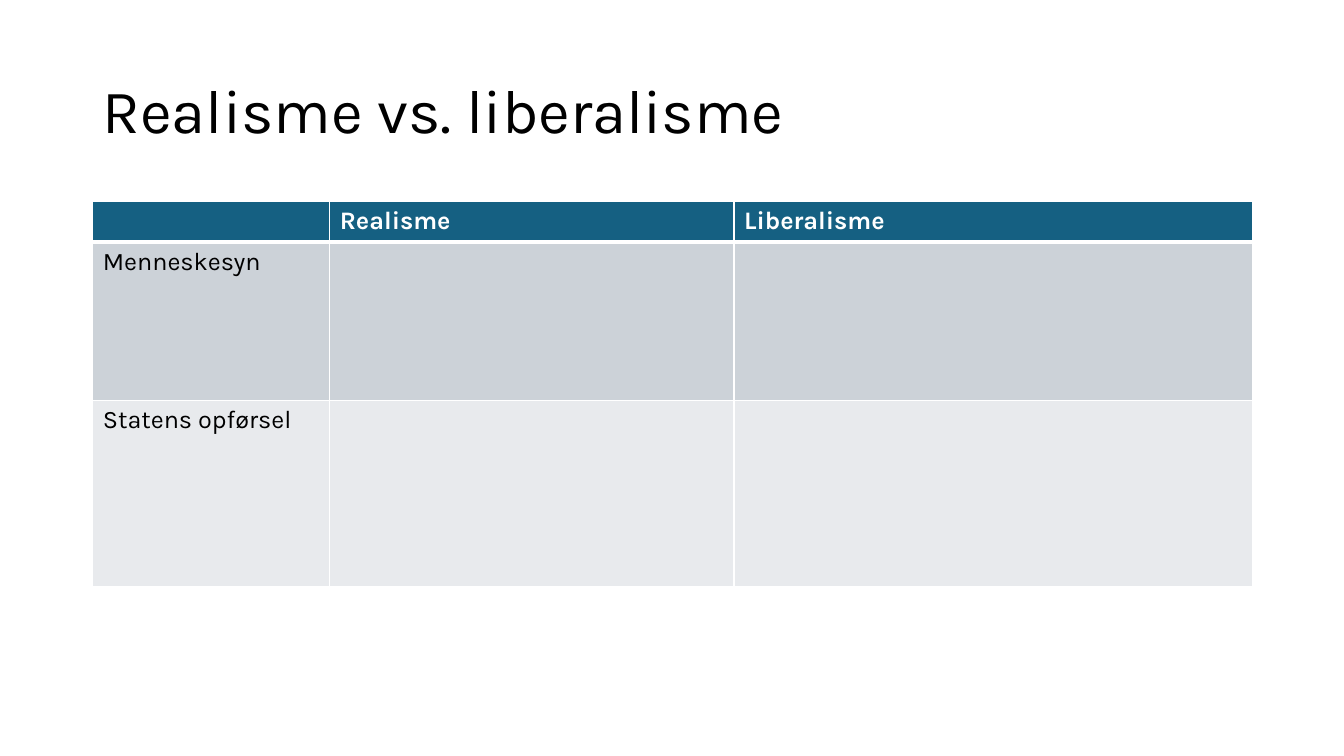
from dataclasses import dataclass

from lxml import etree
from pptx import Presentation
from pptx.dml.color import RGBColor
from pptx.enum import text
from pptx.oxml import ns
from pptx.util import Inches, Pt


@dataclass(frozen=True)
class Theme:
    font: str = "Karla"
    title_size: int = 44
    cell_size: int = 18
    ink: str = "000000"
    white: str = "FFFFFF"
    header: str = "156082"
    bands: tuple = ("CCD2D8", "E8EAED")


THEME = Theme()
COLUMN_WIDTHS = (2.35, 4.01, 5.14)
ROW_HEIGHTS = (0.39, 1.57, 1.85)
ROWS = (
    ("", "Realisme", "Liberalisme"),
    ("Menneskesyn", "", ""),
    ("Statens opførsel", "", ""),
)


def style_text(para, size, color, bold=False):
    for span in para.runs:
        span.font.name = THEME.font
        span.font.size = Pt(size)
        span.font.bold = bold
        span.font.color.rgb = RGBColor.from_string(color)


def add_title(page, wording):
    box = page.shapes.add_textbox(Inches(0.92), Inches(0.4), Inches(11.5), Inches(1.45))
    frame = box.text_frame
    frame.word_wrap = True
    frame.vertical_anchor = text.MSO_ANCHOR.MIDDLE
    frame.text = wording
    para = frame.paragraphs[0]
    para.line_spacing = 0.9
    style_text(para, THEME.title_size, THEME.ink)


def set_borders(cell, widths):
    properties = cell._tc.get_or_add_tcPr()
    for position, (side, width) in enumerate(widths.items()):
        line = etree.Element(ns.qn(f"a:ln{side}"), w=str(Pt(width)))
        fill = etree.SubElement(line, ns.qn("a:solidFill"))
        etree.SubElement(fill, ns.qn("a:srgbClr"), val=THEME.white)
        properties.insert(position, line)


def fill_cell(cell, wording, row):
    is_header = row == 0
    color = THEME.header if is_header else THEME.bands[(row - 1) % 2]
    cell.fill.solid()
    cell.fill.fore_color.rgb = RGBColor.from_string(color)
    top = 3 if row == 1 else 1
    bottom = 3 if is_header else 1
    set_borders(cell, {"L": 1, "R": 1, "T": top, "B": bottom})
    if wording:
        cell.text_frame.text = wording
        ink = THEME.white if is_header else THEME.ink
        style_text(cell.text_frame.paragraphs[0], THEME.cell_size, ink, is_header)


def add_comparison(page):
    frame = page.shapes.add_table(
        len(ROWS), len(COLUMN_WIDTHS), Inches(0.92), Inches(2),
        Inches(sum(COLUMN_WIDTHS)), Inches(sum(ROW_HEIGHTS)),
    )
    table = frame.table
    for column, width in zip(table.columns, COLUMN_WIDTHS):
        column.width = Inches(width)
    for row, height in enumerate(ROW_HEIGHTS):
        table.rows[row].height = Inches(height)
        for column, wording in enumerate(ROWS[row]):
            fill_cell(table.cell(row, column), wording, row)


def main():
    deck = Presentation()
    deck.slide_width = Inches(13.33)
    deck.slide_height = Inches(7.5)
    page = deck.slides.add_slide(deck.slide_layouts[6])
    add_title(page, "Realisme vs. liberalisme")
    add_comparison(page)
    deck.save("out.pptx")


if __name__ == "__main__":
    main()
